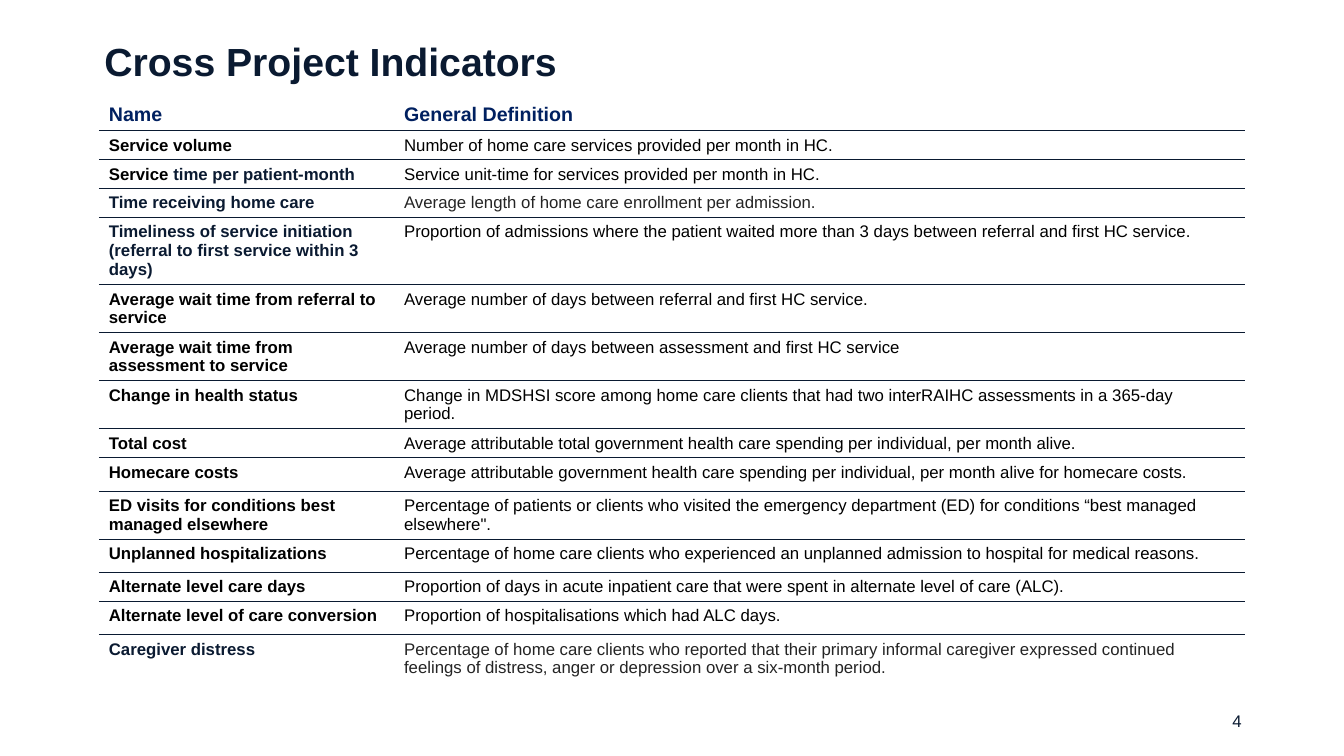
from lxml import etree
from pptx import Presentation
from pptx.dml.color import RGBColor
from pptx.enum.text import MSO_ANCHOR, PP_ALIGN
from pptx.oxml.ns import qn
from pptx.util import Cm, Pt

MIDDLE = MSO_ANCHOR.MIDDLE
RIGHT = PP_ALIGN.RIGHT

NAVY = RGBColor(0x0A, 0x1A, 0x31)
HEADER_BLUE = RGBColor(0x00, 0x20, 0x60)
BLACK = RGBColor(0x00, 0x00, 0x00)
CHARCOAL = RGBColor(0x24, 0x24, 0x24)

FONT = "Arial"
PLAIN_TABLE_STYLE = "{2D5ABB26-0587-4C30-8999-92F81FD0307C}"
COLUMN_WIDTHS = (7.44, 21.44)
HEADER_HEIGHT = 0.62
ONE_LINE, ONE_LINE_TALL, TWO_LINES, THREE_LINES = 0.73, 0.84, 1.21, 1.69
HEADER_SPACING = 10.5
BODY_SPACING = 13.4

HEADERS = ("Name", "General Definition")
INDICATORS = [
    (ONE_LINE, [("Service volume", BLACK)],
     "Number of home care services provided per month in HC.", BLACK),
    (ONE_LINE, [("Service ", BLACK), ("time per patient-month", NAVY)],
     "Service unit-time for services provided per month in HC.", BLACK),
    (ONE_LINE, [("Time receiving home care", NAVY)],
     "Average length of home care enrollment per admission.", CHARCOAL),
    (THREE_LINES,
     [("Timeliness of service initiation (referral to first service within 3 days)", NAVY)],
     "Proportion of admissions where the patient waited more than 3 days "
     "between referral and first HC service.", BLACK),
    (TWO_LINES, [("Average wait time from referral to service", BLACK)],
     "Average number of days between referral and first HC service.", BLACK),
    (TWO_LINES, [("Average wait time from assessment to service", BLACK)],
     "Average number of days between assessment and first HC service", BLACK),
    (TWO_LINES, [("Change in health status", BLACK)],
     "Change in MDSHSI score among home care clients that had two "
     "interRAIHC assessments in a 365-day period.", BLACK),
    (ONE_LINE, [("Total cost", BLACK)],
     "Average attributable total government health care spending per "
     "individual, per month alive.", BLACK),
    (ONE_LINE_TALL, [("Homecare costs", BLACK)],
     "Average attributable government health care spending per individual, "
     "per month alive for homecare costs.", BLACK),
    (TWO_LINES, [("ED visits for conditions best managed elsewhere", BLACK)],
     "Percentage of patients or clients who visited the emergency department "
     "(ED) for conditions “best managed elsewhere\".", BLACK),
    (ONE_LINE_TALL, [("Unplanned hospitalizations", BLACK)],
     "Percentage of home care clients who experienced an unplanned admission "
     "to hospital for medical reasons.", BLACK),
    (ONE_LINE, [("Alternate level care days", BLACK)],
     "Proportion of days in acute inpatient care that were spent in "
     "alternate level of care (ALC).", BLACK),
    (ONE_LINE_TALL, [("Alternate level of care conversion", BLACK)],
     "Proportion of hospitalisations which had ALC days.", BLACK),
    (TWO_LINES, [("Caregiver distress", NAVY)],
     "Percentage of home care clients who reported that their primary "
     "informal caregiver expressed continued feelings of distress, anger or "
     "depression over a six-month period.", CHARCOAL),
]


def write_runs(paragraph, runs, size, bold):
    paragraph.font.name = FONT
    paragraph.font.size = Pt(size)
    paragraph.font.bold = bold
    for text, color in runs:
        run = paragraph.add_run()
        run.text = text
        run.font.color.rgb = color


def add_text(slide, box, text, size, bold=False):
    shape = slide.shapes.add_textbox(*map(Cm, box))
    shape.text_frame.word_wrap = True
    write_runs(shape.text_frame.paragraphs[0], [(text, NAVY)], size, bold)
    return shape.text_frame


def add_title(slide, box):
    frame = add_text(slide, box, "Cross Project Indicators", 28, bold=True)
    frame.paragraphs[0].line_spacing = 0.9


def add_page_number(slide, box):
    frame = add_text(slide, box, "4", 12)
    frame.vertical_anchor = MIDDLE
    frame.paragraphs[0].alignment = RIGHT


def write_cell(cell, runs, size, bold, spacing):
    paragraph = cell.text_frame.paragraphs[0]
    paragraph.line_spacing = Pt(spacing)
    write_runs(paragraph, runs, size, bold)
    cell.fill.background()


def rule_below(cell):
    line = etree.Element(qn("a:lnB"), w=str(Pt(1)))
    fill = etree.SubElement(line, qn("a:solidFill"))
    etree.SubElement(fill, qn("a:srgbClr"), val=str(NAVY))
    cell._tc.get_or_add_tcPr().insert(0, line)


def add_indicator_table(slide, left, top):
    heights = [HEADER_HEIGHT] + [indicator[0] for indicator in INDICATORS]
    frame = slide.shapes.add_table(
        len(heights), len(COLUMN_WIDTHS), Cm(left), Cm(top),
        Cm(sum(COLUMN_WIDTHS)), Cm(sum(heights)))
    table = frame.table
    table.first_row = False
    table.horz_banding = False
    table._tbl.tblPr.find(qn("a:tableStyleId")).text = PLAIN_TABLE_STYLE
    for column, width in zip(table.columns, COLUMN_WIDTHS):
        column.width = Cm(width)
    for row, height in zip(table.rows, heights):
        row.height = Cm(height)

    for cell, header in zip(table.rows[0].cells, HEADERS):
        write_cell(cell, [(header, HEADER_BLUE)], 14, True, HEADER_SPACING)
    for row, (_, name, definition, color) in enumerate(INDICATORS, 1):
        name_cell, definition_cell = table.rows[row].cells
        write_cell(name_cell, name, 12, True, BODY_SPACING)
        write_cell(definition_cell, [(definition, color)], 12, False, BODY_SPACING)
        definition_cell.margin_right = Cm(0.5)

    for row in range(len(INDICATORS)):
        for cell in table.rows[row].cells:
            rule_below(cell)


def main():
    presentation = Presentation()
    presentation.slide_width = Cm(33.87)
    presentation.slide_height = Cm(19.05)
    slide = presentation.slides.add_slide(presentation.slide_layouts[6])
    add_page_number(slide, (23.92, 17.65, 7.62, 1.02))
    add_title(slide, (2.38, 0.94, 29.74, 2.29))
    add_indicator_table(slide, 2.49, 2.67)
    presentation.save("out.pptx")


if __name__ == "__main__":
    main()
